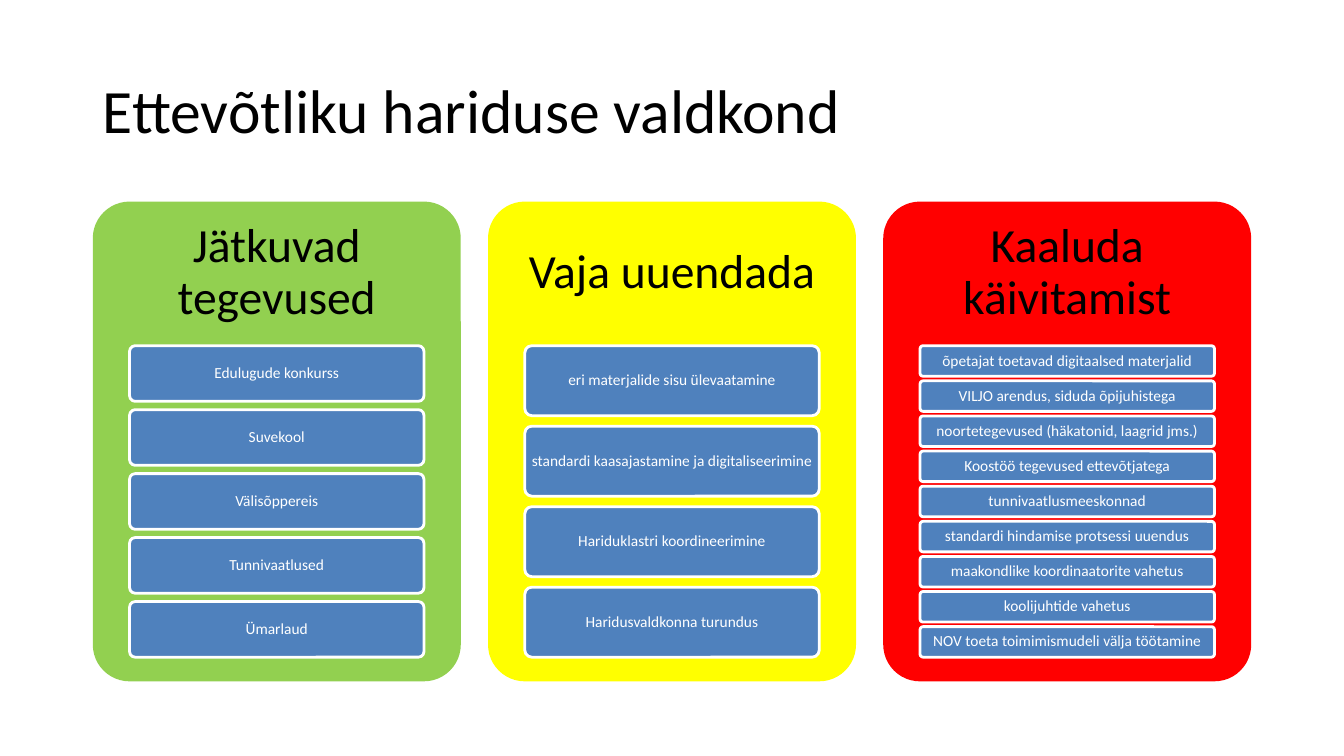
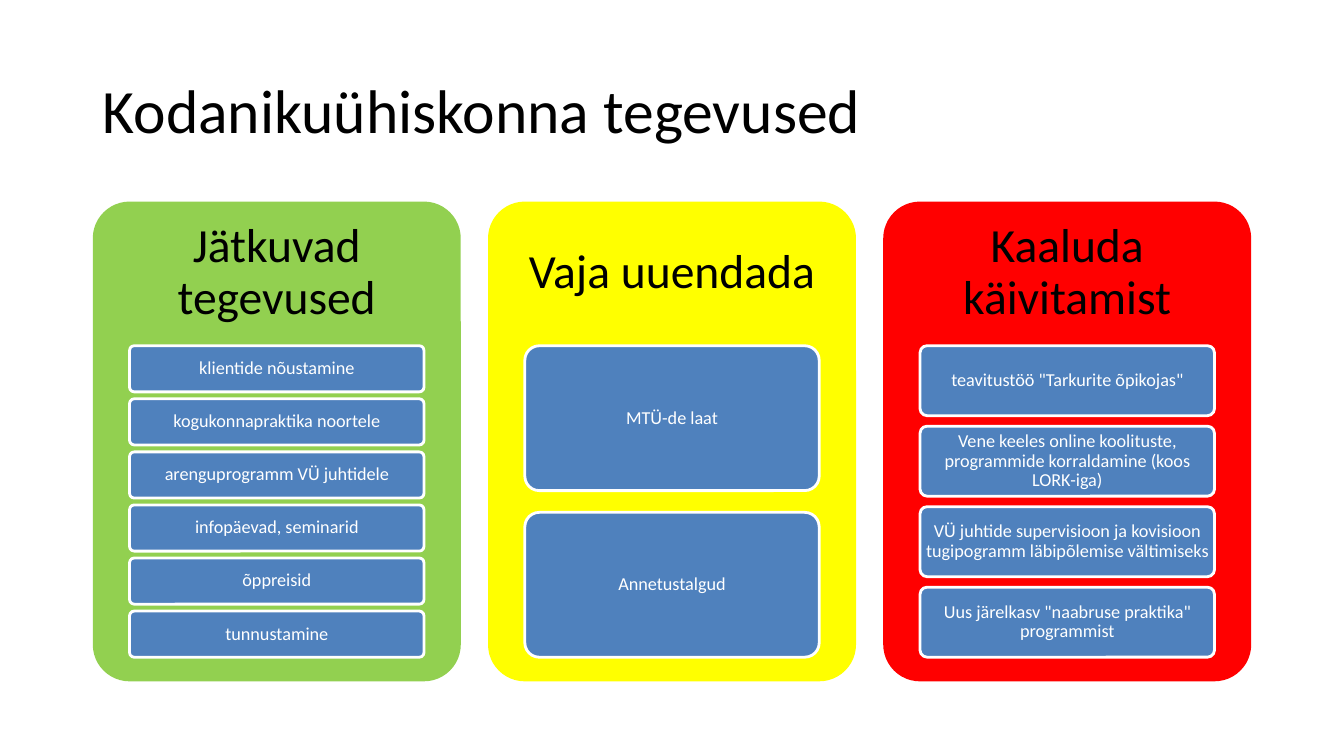
from pptx import Presentation
from pptx.dml.color import RGBColor
from pptx.enum.shapes import MSO_SHAPE
from pptx.enum.text import MSO_ANCHOR, PP_ALIGN
from pptx.util import Inches, Pt

FONT = "Calibri"
BLACK, WHITE, BLUE = "000000", "FFFFFF", "4F81BD"
HEADS = [
    ("Jätkuvad tegevused", "92D050"),
    ("Vaja uuendada", "FFFF00"),
    ("Kaaluda käivitamist", "FF0000"),
]
LEFT, TOP, WIDE, TALL = 0.92, 2, 3.65, 4.76
STEP = 3.92
PAD = 0.04
BAR_TOP, BAR_WIDE, STACK = 3.43, 2.92, 3.09
RATIO = 0.15

SLIDES = [
    ("Ettevõtliku hariduse valdkond", 11, [
        ["Edulugude konkurss", "Suvekool", "Välisõppereis", "Tunnivaatlused", "Ümarlaud"],
        [
            "eri materjalide sisu ülevaatamine",
            "standardi kaasajastamine ja digitaliseerimine",
            "Hariduklastri koordineerimine",
            "Haridusvaldkonna turundus",
        ],
        [
            "õpetajat toetavad digitaalsed materjalid",
            "VILJO arendus, siduda õpijuhistega",
            "noortetegevused (häkatonid, laagrid jms.)",
            "Koostöö tegevused ettevõtjatega",
            "tunnivaatlusmeeskonnad",
            "standardi hindamise protsessi uuendus",
            "maakondlike koordinaatorite vahetus",
            "koolijuhtide vahetus",
            "NOV toeta toimimismudeli välja töötamine",
        ],
    ]),
    ("Kodanikuühiskonna tegevused", 13, [
        [
            "klientide nõustamine",
            "kogukonnapraktika noortele",
            "arenguprogramm VÜ juhtidele",
            "infopäevad, seminarid",
            "õppreisid",
            "tunnustamine",
        ],
        ["MTÜ-de laat", "Annetustalgud"],
        [
            'teavitustöö "Tarkurite õpikojas"',
            "Vene keeles online koolituste, programmide korraldamine (koos LORK-iga)",
            "VÜ juhtide supervisioon ja kovisioon tugipogramm läbipõlemise vältimiseks",
            'Uus järelkasv "naabruse praktika" programmist',
        ],
    ]),
]


def color(code):
    """Turn a hex string into a colour."""
    return RGBColor.from_string(code)


def write(shape, text, size, ink=BLACK, align=PP_ALIGN.CENTER, side=0.1, edge=0.05):
    """Set the text of a shape with its format."""
    frame = shape.text_frame
    frame.word_wrap = True
    frame.vertical_anchor = MSO_ANCHOR.MIDDLE
    frame.margin_left = frame.margin_right = Inches(side)
    frame.margin_top = frame.margin_bottom = Inches(edge)
    line = frame.paragraphs[0]
    line.alignment = align
    line.line_spacing = 0.9
    run = line.add_run()
    run.text = text
    run.font.name = FONT
    run.font.size = Pt(size)
    run.font.color.rgb = color(ink)


def label(slide, box, text, **style):
    """Add a text box."""
    write(slide.shapes.add_textbox(*map(Inches, box)), text, **style)


def panel(slide, box, fill, line=None):
    """Add a rounded box."""
    shape = slide.shapes.add_shape(MSO_SHAPE.ROUNDED_RECTANGLE, *map(Inches, box))
    shape.adjustments[0] = 0.1
    shape.shadow.inherit = False
    shape.fill.solid()
    shape.fill.fore_color.rgb = color(fill)
    if line:
        shape.line.color.rgb = color(line)
        shape.line.width = Pt(2)
    else:
        shape.line.fill.background()
    return shape


def column(slide, left, head, fill, items, size):
    """Add a card with its heading and an even stack of bars."""
    panel(slide, (left, TOP, WIDE, TALL), fill)
    label(slide, (left + PAD, TOP + PAD, WIDE - 2 * PAD, 1.34), head,
          size=34, side=0.14, edge=0.14)
    count = len(items)
    high = STACK / (count + RATIO * (count - 1))
    start = left + (WIDE - BAR_WIDE) / 2
    for row, item in enumerate(items):
        top = BAR_TOP + row * high * (1 + RATIO)
        bar = panel(slide, (start, top, BAR_WIDE, high), BLUE, WHITE)
        write(bar, item, size, ink=WHITE, side=0.03, edge=0.02)


def main():
    """Build and save the slides."""
    deck = Presentation()
    deck.slide_width, deck.slide_height = Inches(13.33), Inches(7.5)
    for title, size, lists in SLIDES:
        slide = deck.slides.add_slide(deck.slide_layouts[6])
        label(slide, (LEFT, 0.4, 11.5, 1.45), title, size=44, align=PP_ALIGN.LEFT)
        for place, ((head, fill), items) in enumerate(zip(HEADS, lists)):
            column(slide, LEFT + place * STEP, head, fill, items, size)
    deck.save("out.pptx")


if __name__ == "__main__":
    main()
